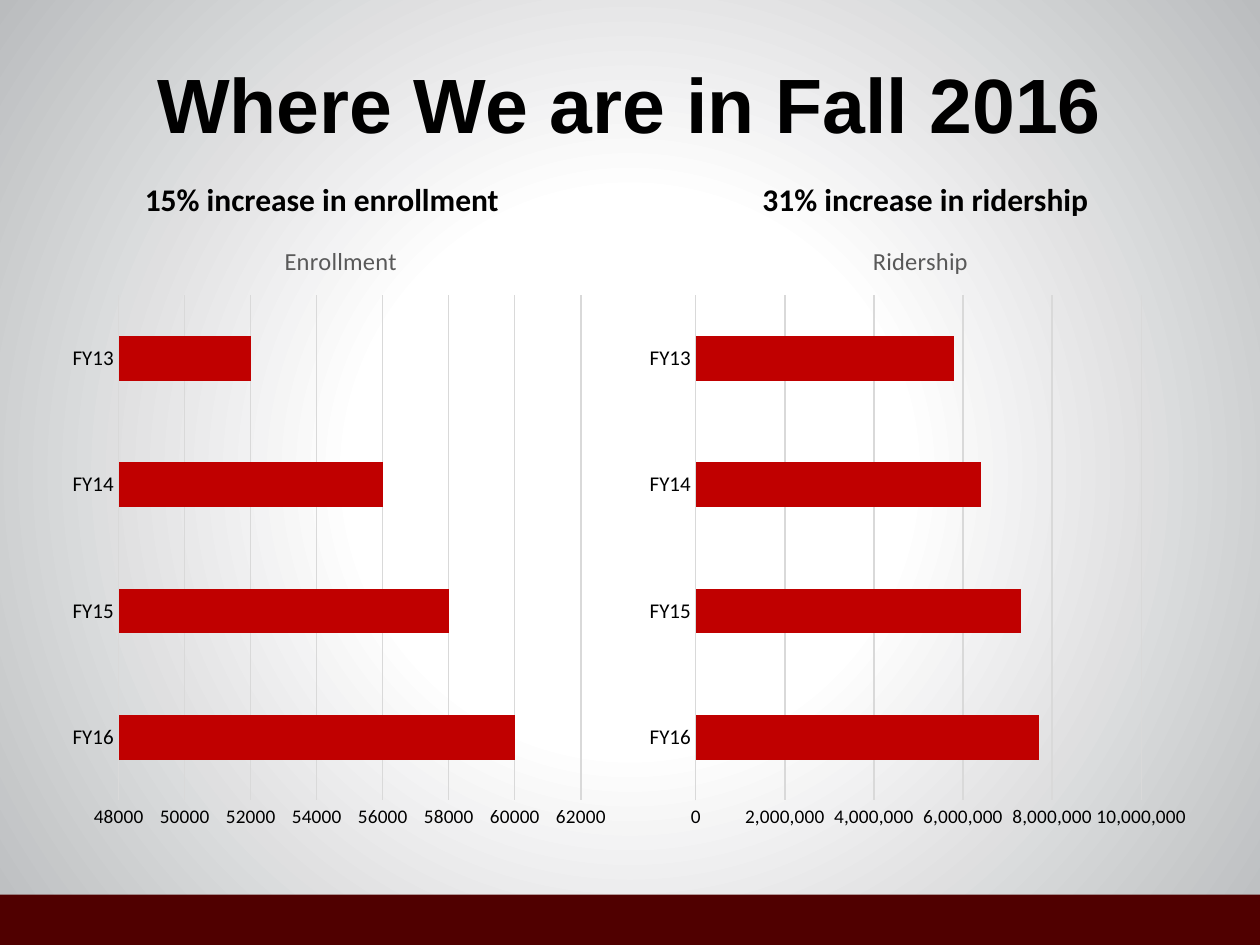
from dataclasses import dataclass

from pptx import Presentation
from pptx.chart.data import CategoryChartData
from pptx.dml.color import RGBColor
from pptx.enum.chart import XL_CHART_TYPE, XL_TICK_MARK
from pptx.enum.shapes import MSO_SHAPE
from pptx.enum.text import MSO_ANCHOR, PP_ALIGN
from pptx.oxml import parse_xml
from pptx.oxml.ns import nsdecls
from pptx.util import Inches, Pt

BAR_CLUSTERED = XL_CHART_TYPE.BAR_CLUSTERED
NO_TICK = XL_TICK_MARK.NONE
CENTER = PP_ALIGN.CENTER
MIDDLE = MSO_ANCHOR.MIDDLE
RECTANGLE = MSO_SHAPE.RECTANGLE

TITLE_ONLY_LAYOUT = 5
BLACK, GRAY, GRID, RED, MAROON = "000000", "595959", "D9D9D9", "C00000", "500000"
YEARS = ["FY16", "FY15", "FY14", "FY13"]
CHART_TOP, CHART_WIDTH, CHART_HEIGHT = 1.75, 4.42, 4.95


@dataclass
class Panel:
    heading: str
    heading_left: float
    heading_width: float
    chart_title: str
    chart_left: float
    title_x: float
    plot_width: float
    values: list[int]
    minimum: int
    maximum: int
    major_unit: int
    number_format: str


PANELS = [
    Panel("15% increase in enrollment", 0.5, 4.11, "Enrollment", 0.5, 0.39, 0.83,
          [60000, 58000, 56000, 52000], 48000, 62000, 2000, "General"),
    Panel("31% increase in ridership", 5.19, 4.31, "Ridership", 5.08, 0.41, 0.8,
          [7700000, 7300000, 6400000, 5800000], 0, 10000000, 2000000, "#,##0"),
]


def color(value: str) -> RGBColor:
    return RGBColor.from_string(value)


def style_font(font, size: float, value: str, name: str = "Calibri", bold: bool = False) -> None:
    font.size = Pt(size)
    font.name = name
    font.bold = bold
    font.color.rgb = color(value)


def set_background(slide) -> None:
    """Fill the slide with a gradient that darkens from its centre."""
    stops = "".join(
        f'<a:gs pos="{percent * 1000}"><a:srgbClr val="{value}"/></a:gs>'
        for percent, value in [(0, "FFFFFF"), (35, "FFFFFF"), (100, "BABCBE")]
    )
    background = parse_xml(
        f'<p:bg {nsdecls("p", "a")}><p:bgPr><a:gradFill rotWithShape="1">'
        f'<a:gsLst>{stops}</a:gsLst><a:path path="circle">'
        '<a:fillToRect l="50000" t="50000" r="50000" b="50000"/></a:path>'
        '</a:gradFill><a:effectLst/></p:bgPr></p:bg>'
    )
    slide.element.cSld.insert(0, background)


def chart_layout(x: float, y: float, size: tuple[float, float] | None = None):
    """Return a manual layout in fractions of the chart; a size means the inner plot area."""
    target = '<c:layoutTarget val="inner"/>' if size else ""
    extent = f'<c:w val="{size[0]}"/><c:h val="{size[1]}"/>' if size else ""
    return parse_xml(
        f'<c:layout {nsdecls("c")}><c:manualLayout>{target}'
        '<c:xMode val="edge"/><c:yMode val="edge"/>'
        f'<c:x val="{x}"/><c:y val="{y}"/>{extent}</c:manualLayout></c:layout>'
    )


def add_footer_band(slide) -> None:
    band = slide.shapes.add_shape(RECTANGLE, 0, Inches(7.1), Inches(10), Inches(0.4))
    band.shadow.inherit = False
    band.fill.solid()
    band.fill.fore_color.rgb = color(MAROON)
    band.line.fill.background()


def add_title(slide, text: str) -> None:
    title = slide.shapes.title
    title.left, title.top = Inches(0.5), Inches(0.33)
    title.width, title.height = Inches(9), Inches(0.97)
    title.text_frame.text = text
    title.text_frame.vertical_anchor = MIDDLE
    paragraph = title.text_frame.paragraphs[0]
    paragraph.alignment = CENTER
    style_font(paragraph.font, 44, BLACK, "Arial", True)


def add_heading(slide, panel: Panel) -> None:
    box = slide.shapes.add_textbox(
        Inches(panel.heading_left), Inches(1.38), Inches(panel.heading_width), Inches(0.4))
    box.text_frame.word_wrap = True
    paragraph = box.text_frame.paragraphs[0]
    paragraph.text = panel.heading
    paragraph.alignment = CENTER
    style_font(paragraph.font, 18, BLACK, bold=True)


def add_bar_chart(slide, panel: Panel) -> None:
    data = CategoryChartData(number_format=panel.number_format)
    data.categories = YEARS
    data.add_series("Series 1", panel.values)
    chart = slide.shapes.add_chart(
        BAR_CLUSTERED, Inches(panel.chart_left), Inches(CHART_TOP),
        Inches(CHART_WIDTH), Inches(CHART_HEIGHT), data).chart
    style_font(chart.font, 10, BLACK)
    chart.has_legend = False

    chart.has_title = True
    title = chart.chart_title
    title.text_frame.text = panel.chart_title
    style_font(title.text_frame.paragraphs[0].font, 14, GRAY)
    title.include_in_layout = False
    for old_layout in title._element.xpath("c:layout"):
        title._element.remove(old_layout)
    title._element.xpath("c:tx")[0].addnext(chart_layout(panel.title_x, 0.03))

    plot_area = chart._chartSpace.chart.plotArea
    for old_layout in plot_area.xpath("c:layout"):
        plot_area.remove(old_layout)
    plot_area.insert(0, chart_layout(0.1, 0.12, (panel.plot_width, 0.81)))

    for axis, size in [(chart.category_axis, 12), (chart.value_axis, 11)]:
        axis.major_tick_mark = NO_TICK
        axis.minor_tick_mark = NO_TICK
        style_font(axis.tick_labels.font, size, BLACK)
    category_line = chart.category_axis.format.line
    category_line.width = Pt(0.75)
    category_line.color.rgb = color(GRID)

    value_axis = chart.value_axis
    value_axis.minimum_scale = panel.minimum
    value_axis.maximum_scale = panel.maximum
    value_axis.major_unit = panel.major_unit
    value_axis.tick_labels.number_format = panel.number_format
    value_axis.tick_labels.number_format_is_linked = False
    value_axis.format.line.fill.background()
    value_axis.has_major_gridlines = True
    gridline = value_axis.major_gridlines.format.line
    gridline.width = Pt(0.75)
    gridline.color.rgb = color(GRID)

    plot = chart.plots[0]
    plot.gap_width = 182
    plot.vary_by_categories = False
    fill = plot.series[0].format.fill
    fill.solid()
    fill.fore_color.rgb = color(RED)


def main() -> None:
    presentation = Presentation()
    presentation.slide_width = Inches(10)
    presentation.slide_height = Inches(7.5)
    slide = presentation.slides.add_slide(presentation.slide_layouts[TITLE_ONLY_LAYOUT])
    set_background(slide)
    add_footer_band(slide)
    add_title(slide, "Where We are in Fall 2016")
    for panel in PANELS:
        add_heading(slide, panel)
        add_bar_chart(slide, panel)
    presentation.save("out.pptx")


if __name__ == "__main__":
    main()
